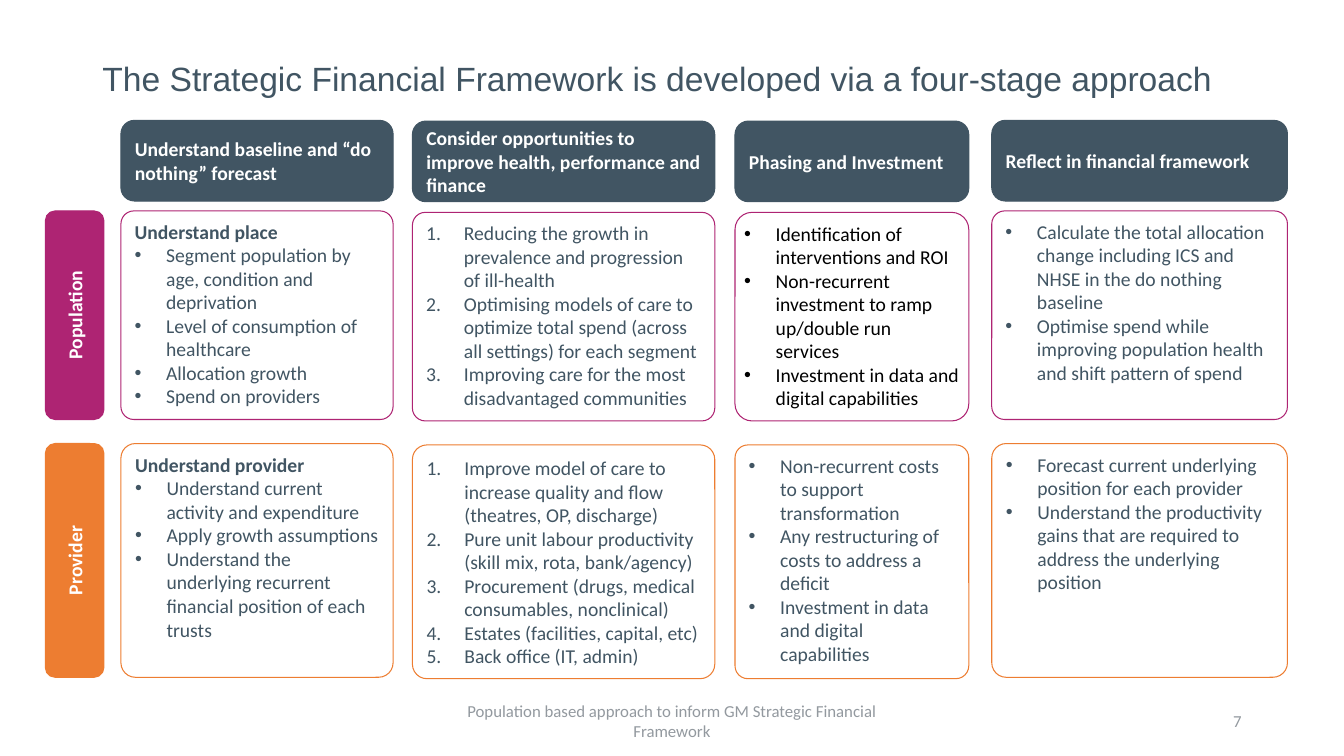
from lxml import etree
from pptx import Presentation
from pptx.dml.color import RGBColor
from pptx.enum.shapes import MSO_SHAPE
from pptx.enum.text import MSO_ANCHOR, MSO_AUTO_SIZE, PP_ALIGN
from pptx.oxml.ns import qn
from pptx.util import Pt

ROUNDED = MSO_SHAPE.ROUNDED_RECTANGLE
TOP, MIDDLE = MSO_ANCHOR.TOP, MSO_ANCHOR.MIDDLE
LEFT, CENTER, RIGHT = PP_ALIGN.LEFT, PP_ALIGN.CENTER, PP_ALIGN.RIGHT
NO_FIT = MSO_AUTO_SIZE.NONE

COLORS = {
    "slate": "415563",
    "magenta": "AE2473",
    "orange": "ED7D31",
    "white": "FFFFFF",
    "black": "000000",
    "gray": "93999F",
}
INDENTS = {"bullet": 22.5, "number": 27}
INSETS = (7.2, 3.6)
TIGHT_INSETS = (3, 3)
LABEL_LEFT, LABEL_WIDTH = 32.4, 41.8
HEADER_TOP, HEADER_HEIGHT = 86, 57.6

ROWS = [
    {"label": "Population", "color": "magenta", "top": 150.7, "height": 149},
    {"label": "Provider", "color": "orange", "top": 316.8, "height": 167},
]

STAGES = [
    {
        "title": "Understand baseline and “do nothing” forecast",
        "left": 86.4, "width": 194.4, "drop": 0,
        "cells": [
            {"heading": "Understand place", "items": [
                "Segment population by age, condition and deprivation",
                "Level of consumption of healthcare",
                "Allocation growth",
                "Spend on providers",
            ]},
            {"heading": "Understand provider", "items": [
                "Understand current activity and expenditure",
                "Apply growth assumptions",
                "Understand the underlying recurrent financial position of each trusts",
            ]},
        ],
    },
    {
        "title": "Consider opportunities to improve health, performance and finance",
        "left": 294.6, "width": 216, "drop": 1,
        "cells": [
            {"marker": "number", "items": [
                "Reducing the growth in prevalence and progression of ill-health",
                "Optimising models of care to optimize total spend (across all settings) for each segment",
                "Improving care for the most disadvantaged communities",
            ]},
            {"marker": "number", "anchor": MIDDLE, "items": [
                "Improve model of care to increase quality and flow (theatres, OP, discharge)",
                "Pure unit labour productivity (skill mix, rota, bank/agency)",
                "Procurement (drugs, medical consumables, nonclinical)",
                "Estates (facilities, capital, etc)",
                "Back office (IT, admin)",
            ]},
        ],
    },
    {
        "title": "Phasing and Investment",
        "left": 525, "width": 167, "drop": 1,
        "cells": [
            {"color": "black", "insets": TIGHT_INSETS, "corner": 0.082, "items": [
                "Identification of interventions and ROI",
                "Non-recurrent investment to ramp up/double run services",
                "Investment in data and digital capabilities",
            ]},
            {"corner": 0.055, "items": [
                "Non-recurrent costs to support transformation",
                "Any restructuring of costs to address a deficit",
                "Investment in data and digital capabilities",
            ]},
        ],
    },
    {
        "title": "Reflect in financial framework",
        "left": 708.4, "width": 211.2, "drop": 0,
        "cells": [
            {"items": [
                "Calculate the total allocation change including ICS and NHSE in the do nothing baseline",
                "Optimise spend while improving population health and shift pattern of spend",
            ]},
            {"items": [
                "Forecast current underlying position for each provider",
                "Understand the productivity gains that are required to address the underlying position",
            ]},
        ],
    },
]


def rgb(name):
    """Return the named colour."""
    return RGBColor.from_string(COLORS[name])


def add_marker(paragraph, marker):
    """Give a paragraph a hanging bullet or number."""
    properties = paragraph._p.get_or_add_pPr()
    indent = Pt(INDENTS[marker])
    properties.set("marL", str(indent))
    properties.set("indent", str(-indent))
    if marker == "number":
        etree.SubElement(properties, qn("a:buFont"), typeface="+mj-lt")
        etree.SubElement(properties, qn("a:buAutoNum"), type="arabicPeriod")
    else:
        etree.SubElement(properties, qn("a:buFont"), typeface="Arial")
        etree.SubElement(properties, qn("a:buChar"), char="•")


def write(paragraph, text, size=14, font="Calibri", color="slate", bold=False,
          align=LEFT, marker=None, line_spacing=None, space_after=None):
    """Fill a paragraph with formatted text."""
    paragraph.alignment = align
    paragraph.line_spacing = line_spacing
    if space_after is not None:
        paragraph.space_after = Pt(space_after)
    if marker:
        add_marker(paragraph, marker)
    run = paragraph.add_run()
    run.text = text
    run.font.size = Pt(size)
    run.font.name = font
    run.font.bold = bold
    run.font.color.rgb = rgb(color)


def set_frame(shape, anchor=MIDDLE, insets=INSETS):
    """Set wrapping, anchor and insets, and return the text frame."""
    frame = shape.text_frame
    frame.word_wrap = True
    frame.auto_size = NO_FIT
    frame.vertical_anchor = anchor
    frame.margin_left = frame.margin_right = Pt(insets[0])
    frame.margin_top = frame.margin_bottom = Pt(insets[1])
    return frame


def add_panel(slide, box, fill, line, corner=None):
    """Draw a rounded panel."""
    shape = slide.shapes.add_shape(ROUNDED, *map(Pt, box))
    shape.shadow.inherit = False
    shape.fill.solid()
    shape.fill.fore_color.rgb = rgb(fill)
    shape.line.color.rgb = rgb(line)
    shape.line.width = Pt(0.75)
    if corner is not None:
        shape.adjustments[0] = corner
    return shape


def add_title(slide, box, text):
    """Place and format the title placeholder."""
    title = slide.shapes.title
    title.left, title.top, title.width, title.height = map(Pt, box)
    write(set_frame(title).paragraphs[0], text, size=24, font="Arial", line_spacing=0.9)


def add_row_label(slide, box, text, color):
    """Draw a row label with upward text."""
    frame = set_frame(add_panel(slide, box, color, color), insets=TIGHT_INSETS)
    frame._txBody.bodyPr.set("vert", "vert270")
    write(frame.paragraphs[0], text, color="white", bold=True, align=CENTER, space_after=1)


def add_header(slide, box, text):
    """Draw a stage header."""
    frame = set_frame(add_panel(slide, box, "slate", "slate"))
    write(frame.paragraphs[0], text, color="white", bold=True)


def add_cell(slide, box, line, items, heading=None, marker="bullet", color="slate",
             anchor=TOP, insets=INSETS, corner=0.062):
    """Draw an outlined cell with an optional heading and a list."""
    frame = set_frame(add_panel(slide, box, "white", line, corner), anchor, insets)
    entries = [(item, {"marker": marker}) for item in items]
    if heading:
        entries.insert(0, (heading, {"bold": True}))
    for index, (text, style) in enumerate(entries):
        paragraph = frame.add_paragraph() if index else frame.paragraphs[0]
        write(paragraph, text, color=color, **style)


def add_stage(slide, left, width, drop, title, cells):
    """Draw one stage column: its header and a cell for each row."""
    add_header(slide, (left, HEADER_TOP + drop / 2, width, HEADER_HEIGHT), title)
    for row, cell in zip(ROWS, cells):
        box = (left, row["top"] + drop, width, row["height"])
        add_cell(slide, box, row["color"], **cell)


def add_footer_text(slide, box, text, align):
    """Add a small gray footer text."""
    frame = set_frame(slide.shapes.add_textbox(*map(Pt, box)))
    write(frame.paragraphs[0], text, size=12, color="gray", align=align)


def main():
    """Build and save the presentation."""
    presentation = Presentation()
    presentation.slide_width, presentation.slide_height = Pt(960), Pt(540)
    slide = presentation.slides.add_slide(presentation.slide_layouts[5])
    add_title(slide, (66, 28.8, 828, 57.5),
              "The Strategic Financial Framework is developed via a four-stage approach")
    for row in ROWS:
        box = (LABEL_LEFT, row["top"], LABEL_WIDTH, row["height"])
        add_row_label(slide, box, row["label"], row["color"])
    for stage in STAGES:
        add_stage(slide, **stage)
    add_footer_text(slide, (318, 500.5, 324, 28.75),
                    "Population based approach to inform GM Strategic Financial Framework", CENTER)
    add_footer_text(slide, (678, 500.5, 216, 28.75), "7", RIGHT)
    presentation.save("out.pptx")


if __name__ == "__main__":
    main()
